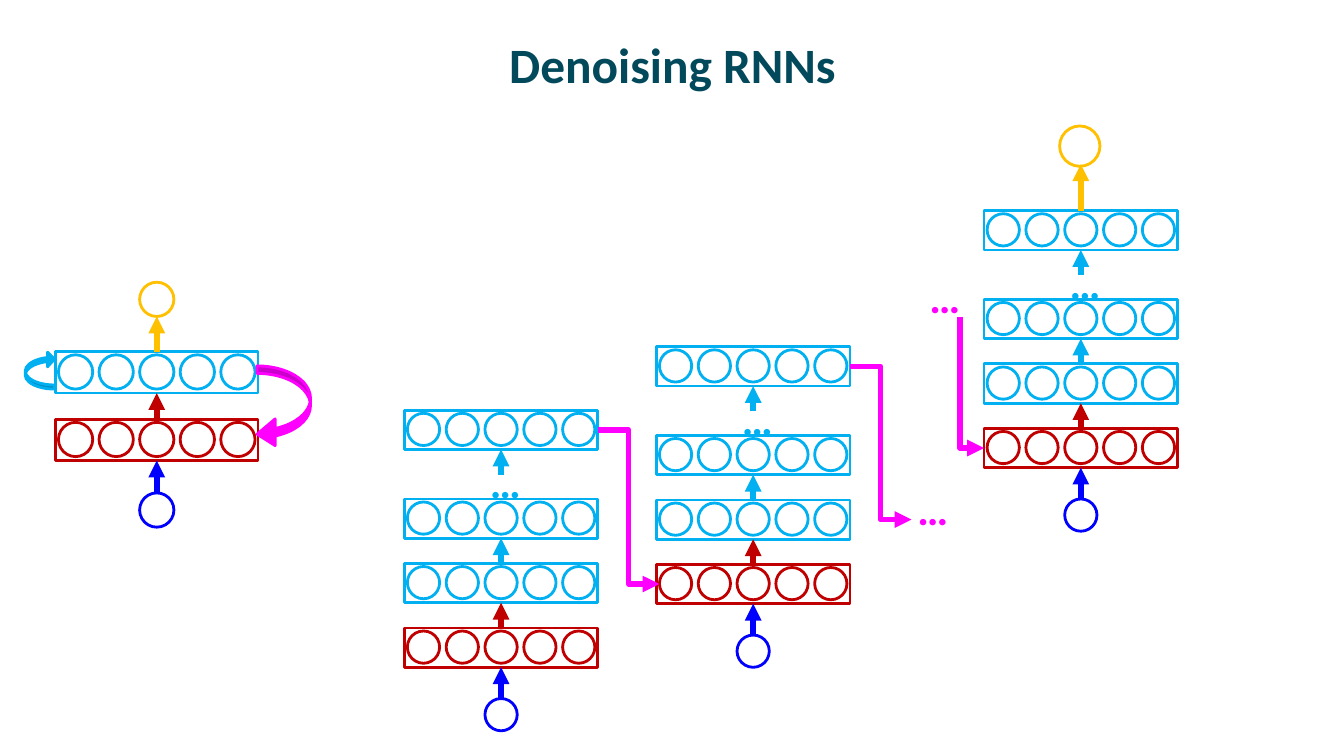
"""Build the Denoising RNNs slide: one recurrent network and its unrolled deep stacks."""
from dataclasses import dataclass

from lxml.etree import SubElement
from pptx import Presentation
from pptx.dml.color import RGBColor
from pptx.enum.shapes import MSO_CONNECTOR, MSO_SHAPE
from pptx.enum.text import MSO_ANCHOR, MSO_AUTO_SIZE, PP_ALIGN
from pptx.oxml.ns import qn
from pptx.util import Inches, Pt


@dataclass(frozen=True)
class Theme:
    """Colours, font and sizes of the slide."""
    title: str = "03495C"
    input: str = "0000FF"
    first: str = "C00000"
    hidden: str = "00B0F0"
    output: str = "FFC000"
    feedback: str = "FF00FF"
    font: str = "Calibri"
    title_size: float = 35.3
    dots_size: float = 31
    outline: float = 2
    arrow: float = 4


@dataclass(frozen=True)
class Box:
    """A rectangle in inches."""
    left: float
    top: float
    width: float
    height: float

    @property
    def center(self):
        """Return the horizontal middle."""
        return self.left + self.width / 2

    @property
    def middle(self):
        """Return the vertical middle."""
        return self.top + self.height / 2

    @property
    def right(self):
        """Return the right edge."""
        return self.left + self.width

    @property
    def bottom(self):
        """Return the bottom edge."""
        return self.top + self.height

    def lengths(self):
        """Return the four measures as slide lengths."""
        return [Inches(n) for n in (self.left, self.top, self.width, self.height)]


THEME = Theme()
INSET = 0.03
UNITS = 5


def add_outline(shapes, kind, box, color, filled=False):
    """Add an outlined shape, hollow unless filled."""
    shape = shapes.add_shape(kind, *box.lengths())
    shape.shadow.inherit = False
    shape.line.color.rgb = RGBColor.from_string(color)
    shape.line.width = Pt(THEME.outline)
    if filled:
        shape.fill.solid()
        shape.fill.fore_color.rgb = RGBColor.from_string(color)
    else:
        shape.fill.background()
    return shape


def add_circle(shapes, center, top, size, color):
    """Add a hollow unit centred on a vertical axis."""
    add_outline(shapes, MSO_SHAPE.OVAL, Box(center - size / 2, top, size, size), color)


def add_arrow(shapes, start, end, color, kind=MSO_CONNECTOR.STRAIGHT):
    """Add a connector with an arrowhead at its end."""
    arrow = shapes.add_connector(kind, *[Inches(n) for n in (*start, *end)])
    arrow.line.color.rgb = RGBColor.from_string(color)
    arrow.line.width = Pt(THEME.arrow)
    SubElement(arrow.line._get_or_add_ln(), qn("a:tailEnd"), type="triangle")
    SubElement(arrow.element.spPr, qn("a:effectLst"))
    return arrow


def add_corner_arrow(shapes, start, end, color):
    """Add an arrow that runs down and then right, as a turned one-bend connector."""
    center, middle = (start[0] + end[0]) / 2, (start[1] + end[1]) / 2
    across, down = (end[0] - start[0]) / 2, (end[1] - start[1]) / 2
    arrow = add_arrow(shapes, (center + down, middle - across),
                      (center - down, middle + across), color, MSO_CONNECTOR.ELBOW)
    arrow.rotation = 270 if hasattr(arrow, "rotation") else 0
    properties = arrow.element.spPr
    properties.find(qn("a:xfrm")).set("rot", "16200000")
    properties.find(qn("a:prstGeom")).set("prst", "bentConnector2")


def add_span(para, text, size, color):
    """Add one bold run to a paragraph."""
    span = para.add_run()
    span.text = text
    span.font.name = THEME.font
    span.font.size = Pt(size)
    span.font.bold = True
    span.font.color.rgb = RGBColor.from_string(color)


def add_dots(shapes, box, color):
    """Add an ellipsis that stands for what is left out."""
    frame = shapes.add_textbox(*box.lengths()).text_frame
    frame.word_wrap = False
    frame.auto_size = MSO_AUTO_SIZE.SHAPE_TO_FIT_TEXT
    add_span(frame.paragraphs[0], "…", THEME.dots_size, color)


def add_layer(shapes, box, color):
    """Add a frame holding a row of evenly spaced units."""
    size = box.height - 2 * INSET - 0.01
    pitch = (box.width - 2 * INSET - size) / (UNITS - 1)
    for unit in range(UNITS):
        center = box.left + INSET + size / 2 + unit * pitch
        add_circle(shapes, center, box.top + INSET, size, color)
    add_outline(shapes, MSO_SHAPE.RECTANGLE, box, color)


def add_title(page, box):
    """Place and format the slide title."""
    title = page.shapes.title
    title.left, title.top, title.width, title.height = box.lengths()
    frame = title.text_frame
    frame.auto_size = MSO_AUTO_SIZE.NONE
    frame.vertical_anchor = MSO_ANCHOR.MIDDLE
    para = frame.paragraphs[0]
    para.alignment = PP_ALIGN.CENTER
    add_span(para, "Denoising RNNs", THEME.title_size, THEME.title)


def add_recurrent_network(page, box):
    """Draw the folded network with its two feedback loops."""
    shapes = page.shapes.add_group_shape().shapes
    size, axis = 0.34, box.center
    hidden = Box(box.left, box.top + 0.69, box.width, 0.41)
    first = Box(box.left, box.top + 1.36, box.width, 0.41)
    input_top = box.bottom - size
    add_circle(shapes, axis, box.top, size, THEME.output)
    add_layer(shapes, hidden, THEME.hidden)
    add_layer(shapes, first, THEME.first)
    add_circle(shapes, axis, input_top, size, THEME.input)
    for start, end, color in ((hidden.top, box.top + size, THEME.output),
                              (first.top, hidden.bottom, THEME.first),
                              (input_top, first.bottom, THEME.input)):
        add_arrow(shapes, (axis, start), (axis, end), color)
    loops = (
        (Box(box.right - 0.01, hidden.top + 0.14, 0.53, 0.81), THEME.feedback, 0, 0.339),
        (Box(box.left - 0.3, hidden.top, 0.29, 0.37), THEME.hidden, 180, 0.238),
    )
    for loop, color, turn, head in loops:
        arrow = add_outline(shapes, MSO_SHAPE.CURVED_LEFT_ARROW, loop, color, filled=True)
        arrow.rotation = turn
        for index, value in enumerate((0.141, 0.5, head)):
            arrow.adjustments[index] = value


def add_deep_stack(page, box):
    """Draw one unrolled step and return its top and bottom layers."""
    shapes = page.shapes.add_group_shape().shapes
    size, axis = 0.32, box.center
    top, upper, lower, first = (
        Box(box.left, box.top + offset, box.width, 0.39) for offset in (0, 0.88, 1.52, 2.16))
    for layer in (top, upper, lower):
        add_layer(shapes, layer, THEME.hidden)
    add_layer(shapes, first, THEME.first)
    input_top = box.bottom - size
    add_circle(shapes, axis, input_top, size, THEME.input)
    for start, end, color in ((input_top, first.bottom, THEME.input),
                              (first.top, lower.bottom, THEME.first),
                              (lower.top, upper.bottom, THEME.hidden),
                              (top.bottom + 0.25, top.bottom, THEME.hidden)):
        add_arrow(shapes, (axis, start), (axis, end), color)
    add_dots(shapes, Box(axis - 0.21, box.top + 0.4, 0.41, 0.5), THEME.hidden)
    return top, first


def add_unrolled_network(page, box):
    """Draw the three steps, the links between them and the final output."""
    shapes = page.shapes
    (top_one, _), (top_two, first_two), (top_last, first_last) = (
        add_deep_stack(page, Box(box.left + across, box.top + down, 1.92, 3.18))
        for across, down in ((0, 2.82), (2.5, 2.19), (5.75, 0.84)))
    color = THEME.feedback
    for source, drop in ((top_one, first_two.middle - top_one.middle), (top_two, 1.52)):
        add_arrow(shapes, (source.right, source.middle),
                  (source.right + 0.61, source.middle + drop), color, MSO_CONNECTOR.ELBOW)
    add_corner_arrow(shapes, (first_last.left - 0.24, first_last.middle - 1.3),
                     (first_last.left, first_last.middle), color)
    for across, down in ((4.99, 3.48), (5.11, 1.38)):
        add_dots(shapes, Box(box.left + across, box.top + down, 0.51, 0.62), color)
    add_circle(shapes, top_last.center - 0.01, box.top, 0.4, THEME.output)
    add_arrow(shapes, (top_last.center, top_last.top),
              (top_last.center, box.top + 0.38), THEME.output)


def main():
    """Build and save the deck."""
    deck = Presentation()
    deck.slide_width, deck.slide_height = Inches(13.33), Inches(7.5)
    page = deck.slides.add_slide(deck.slide_layouts[5])
    add_title(page, Box(0.67, 0.17, 12, 0.92))
    add_recurrent_network(page, Box(0.55, 2.8, 2.01, 2.43))
    add_unrolled_network(page, Box(4.01, 1.25, 7.67, 6))
    deck.save("out.pptx")


if __name__ == "__main__":
    main()
